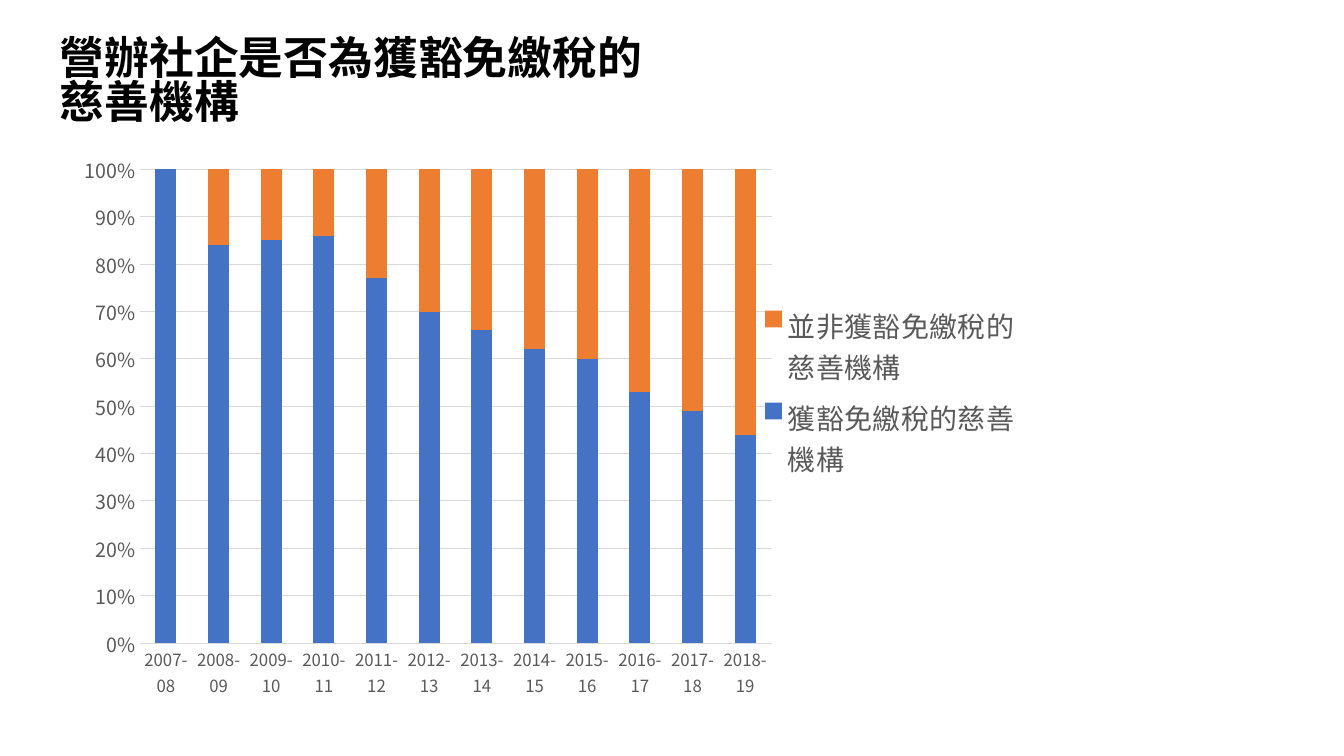
from lxml.etree import SubElement
from pptx import Presentation
from pptx.chart.data import CategoryChartData as ChartData
from pptx.dml.color import RGBColor
from pptx.enum.chart import XL_CHART_TYPE as ChartType
from pptx.enum.chart import XL_LEGEND_POSITION as LegendPos
from pptx.enum.chart import XL_TICK_MARK as Tick
from pptx.enum.text import MSO_ANCHOR as Anchor
from pptx.enum.text import MSO_AUTO_SIZE as AutoSize
from pptx.enum.text import PP_ALIGN as Align
from pptx.oxml import parse_xml
from pptx.oxml.ns import nsdecls, qn
from pptx.util import Cm, Pt

BLACK = RGBColor(0x00, 0x00, 0x00)
GRAY = RGBColor(0x59, 0x59, 0x59)
PALE = RGBColor(0xD9, 0xD9, 0xD9)
BLUE = RGBColor(0x44, 0x72, 0xC4)
ORANGE = RGBColor(0xED, 0x7D, 0x31)

YEARS = [f"{year}-{(year + 1) % 100:02}" for year in range(2007, 2019)]
EXEMPT = [100, 84, 85, 86, 77, 70, 66, 62, 60, 53, 49, 44]
SERIES = [
    ("獲豁免繳稅的慈善機構", EXEMPT, BLUE),
    ("並非獲豁免繳稅的慈善機構", [100 - share for share in EXEMPT], ORANGE),
]


class Deck:
    latin = "Noto Sans CJK SC"
    han = "Noto Sans CJK TC"

    def __init__(self):
        self.prs = Presentation()
        self.prs.slide_width, self.prs.slide_height = Cm(33.87), Cm(19.05)
        self.slide = self.prs.slides.add_slide(self.prs.slide_layouts[5])

    def style(self, font, size, color, name):
        """Set the font for both Latin and East Asian text."""
        font.size, font.name = Pt(size), name
        font.color.rgb = color
        SubElement(font._element, qn("a:ea")).set("typeface", name)

    def place(self, part, x, y, w, h, inner=False):
        """Give a chart part a fixed place, in shares of the chart."""
        target = '<c:layoutTarget val="inner"/>' if inner else ""
        modes = "".join(f'<c:{k}Mode val="edge"/>' for k in "xy")
        sizes = "".join(f'<c:{k} val="{v}"/>' for k, v in zip("xywh", (x, y, w, h)))
        for old in part.findall(qn("c:layout")):
            part.remove(old)
        layout = parse_xml(
            f'<c:layout {nsdecls("c")}><c:manualLayout>{target}{modes}{sizes}'
            "</c:manualLayout></c:layout>"
        )
        before = part.find(qn("c:legendPos"))
        part.insert(0 if before is None else part.index(before) + 1, layout)

    def title(self, text, x, y, w, h):
        box = self.slide.shapes.title
        box.left, box.top, box.width, box.height = Cm(x), Cm(y), Cm(w), Cm(h)
        frame = box.text_frame
        frame.text = text
        frame.word_wrap = True
        frame.auto_size = AutoSize.NONE
        frame.vertical_anchor = Anchor.TOP
        para = frame.paragraphs[0]
        para.alignment = Align.LEFT
        para.line_spacing = 0.83
        para.font.bold = True
        self.style(para.font, 32, BLACK, self.han)

    def axis(self, axis, size):
        axis.major_tick_mark = axis.minor_tick_mark = Tick.NONE
        axis.format.line.fill.background()
        self.style(axis.tick_labels.font, size, GRAY, self.latin)

    def chart(self, x, y, w, h):
        data = ChartData()
        data.categories = YEARS
        for name, values, _ in SERIES:
            data.add_series(name, values)
        chart = self.slide.shapes.add_chart(
            ChartType.COLUMN_STACKED_100, Cm(x), Cm(y), Cm(w), Cm(h), data
        ).chart
        chart.has_title = False
        self.style(chart.font, 10, BLACK, self.latin)
        self.axis(chart.category_axis, 12)
        scale = chart.value_axis
        self.axis(scale, 14)
        scale.minimum_scale, scale.maximum_scale, scale.major_unit = 0, 1, 0.1
        scale.tick_labels.number_format = "0%"
        scale.tick_labels.number_format_is_linked = False
        grid = scale.major_gridlines.format.line
        grid.color.rgb, grid.width = PALE, Pt(0.75)

        plot = chart.plots[0]
        plot.gap_width, plot.overlap = 150, 100
        plot.vary_by_categories = False
        for bars, (_, _, color) in zip(plot.series, SERIES):
            bars.format.fill.solid()
            bars.format.fill.fore_color.rgb = color

        chart.has_legend = True
        legend = chart.legend
        legend.position = LegendPos.RIGHT
        legend.include_in_layout = False
        self.style(legend.font, 20, GRAY, self.han)
        self.place(legend._element, 0.72, 0.25, 0.27, 0.34)
        area = chart._chartSpace.chart.plotArea
        self.place(area, 0.07, 0.03, 0.66, 0.83, inner=True)


def main():
    deck = Deck()
    deck.title("營辦社企是否為獲豁免繳稅的慈善機構", 1.25, 0.84, 15.45, 3)
    deck.chart(1.83, 3.84, 24.13, 14.38)
    deck.prs.save("out.pptx")


if __name__ == "__main__":
    main()
